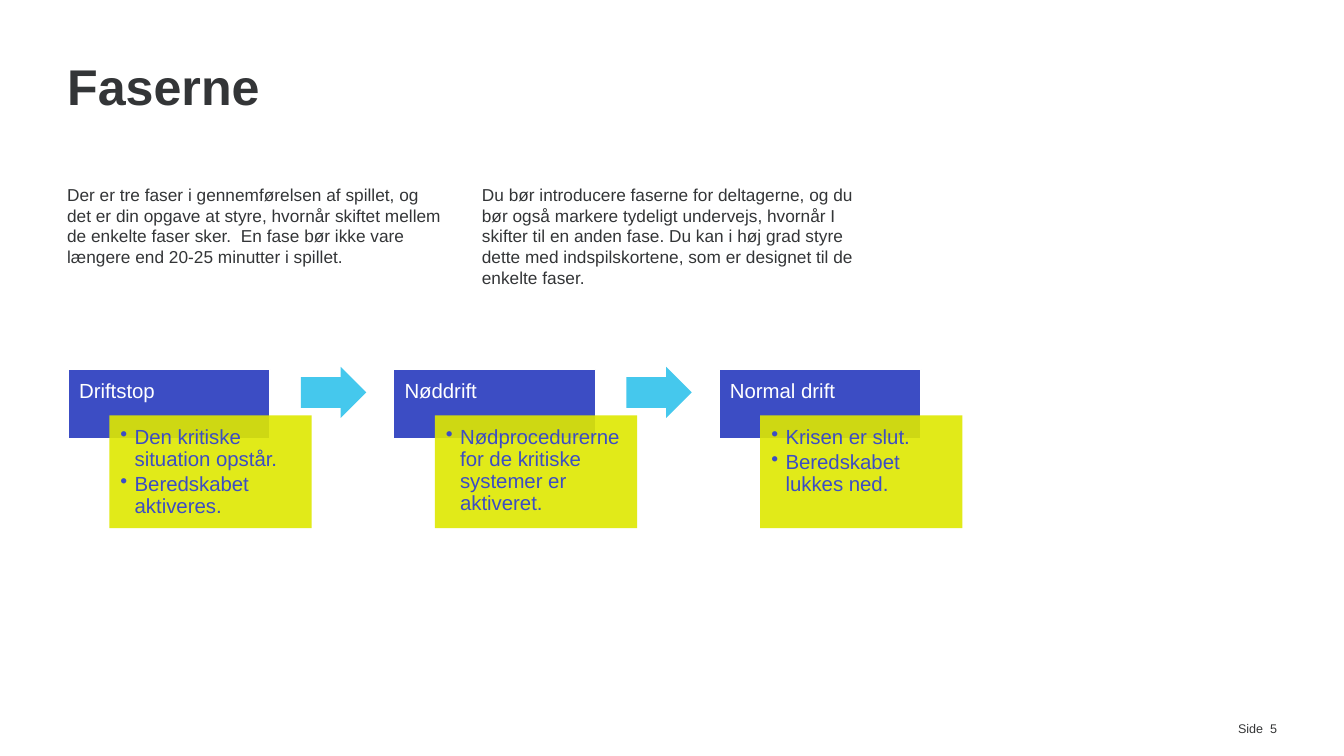
from pptx import Presentation
from pptx.dml.color import RGBColor
from pptx.enum.shapes import MSO_SHAPE as SHAPE
from pptx.enum.text import PP_ALIGN as ALIGN, MSO_ANCHOR as ANCHOR
from pptx.oxml.ns import qn
from pptx.util import Cm, Pt
from lxml.etree import SubElement


def rgb(value):
    return RGBColor.from_string(value)


def write(shape, lines, size, color, spacing=1.0, after=0, inset=0,
          align=ALIGN.LEFT, bold=False):
    tf = shape.text_frame
    frame = {"word_wrap": True, "vertical_anchor": ANCHOR.TOP}
    frame.update({f"margin_{side}": Cm(inset) for side in ("left", "top", "right", "bottom")})
    for name, value in frame.items():
        setattr(tf, name, value)
    for i, line in enumerate(lines):
        p = tf.add_paragraph() if i else tf.paragraphs[0]
        for name, value in {"alignment": align, "line_spacing": spacing,
                            "space_before": Pt(0), "space_after": Pt(after)}.items():
            setattr(p, name, value)
        r = p.add_run()
        r.text = line
        for name, value in {"name": "Arial", "size": Pt(size), "bold": bold}.items():
            setattr(r.font, name, value)
        r.font.color.rgb = rgb(color)


DARK, BLUE, YELLOW, CYAN, WHITE = "333537", "3C4DC4", "DEE800", "45C8ED", "FFFFFF"
LEFT, STEP = 1.53, 7.32

prs = Presentation()
prs.slide_width, prs.slide_height = Cm(30.23), Cm(17)
s = prs.slides.add_slide(prs.slide_layouts[5])

title = s.shapes.title
for name, value in {"left": 1.51, "top": 1.4, "width": 27.2, "height": 1.4}.items():
    setattr(title, name, Cm(value))
write(title, ["Faserne"], 32, DARK, spacing=0.9, bold=True)

columns = [
    "Der er tre faser i gennemførelsen af spillet, og det er din opgave at styre, "
    "hvornår skiftet mellem de enkelte faser sker.  En fase bør ikke vare længere "
    "end 20-25 minutter i spillet.",
    "Du bør introducere faserne for deltagerne, og du bør også markere tydeligt "
    "undervejs, hvornår I skifter til en anden fase. Du kan i høj grad styre dette "
    "med indspilskortene, som er designet til de enkelte faser.",
]
for i, text in enumerate(columns):
    box = s.shapes.add_textbox(Cm(1.51 + 9.33 * i), Cm(4.14), Cm(8.54), Cm(3.58))
    write(box, [text], 11, DARK, after=6)

phases = [
    ("Driftstop", ["Den kritiske situation opstår.", "Beredskabet aktiveres."]),
    ("Nøddrift", ["Nødprocedurerne for de kritiske systemer er aktiveret."]),
    ("Normal drift", ["Krisen er slut.", "Beredskabet lukkes ned."]),
]
for i, (phase, points) in enumerate(phases):
    x = LEFT + STEP * i
    header = s.shapes.add_shape(SHAPE.RECTANGLE, Cm(x), Cm(8.31), Cm(4.55), Cm(1.56))
    header.shadow.inherit = False
    header.fill.solid()
    header.fill.fore_color.rgb = rgb(BLUE)
    header.line.color.rgb = rgb(WHITE)
    header.line.width = Pt(1)
    write(header, [phase], 13, WHITE, spacing=0.9, inset=0.25)

    card = s.shapes.add_shape(SHAPE.RECTANGLE, Cm(x + 0.93), Cm(9.34), Cm(4.55), Cm(2.54))
    card.shadow.inherit = False
    card.fill.solid()
    card.fill.fore_color.rgb = rgb(YELLOW)
    color = card.fill._xPr.find(qn("a:solidFill"))[0]
    SubElement(color, qn("a:alpha"), val="90000")
    card.line.fill.background()
    write(card, points, 13, BLUE, spacing=0.9, after=2, inset=0.25)
    for p in card.text_frame.paragraphs:
        pPr = p._p.get_or_add_pPr()
        pPr.set("marL", str(Cm(0.32)))
        pPr.set("indent", str(Cm(-0.32)))
        SubElement(pPr, qn("a:buChar"), char="•")

    if i < len(phases) - 1:
        arrow = s.shapes.add_shape(SHAPE.RIGHT_ARROW, Cm(x + 5.24), Cm(8.25), Cm(1.47), Cm(1.15))
        arrow.adjustments[0] = 0.6
        arrow.shadow.inherit = False
        arrow.fill.solid()
        arrow.fill.fore_color.rgb = rgb(CYAN)
        arrow.line.fill.background()

footer = s.shapes.add_textbox(Cm(24.92), Cm(16.21), Cm(3.81), Cm(0.36))
write(footer, ["Side  5"], 8, "343536", align=ALIGN.RIGHT)

prs.save("out.pptx")
